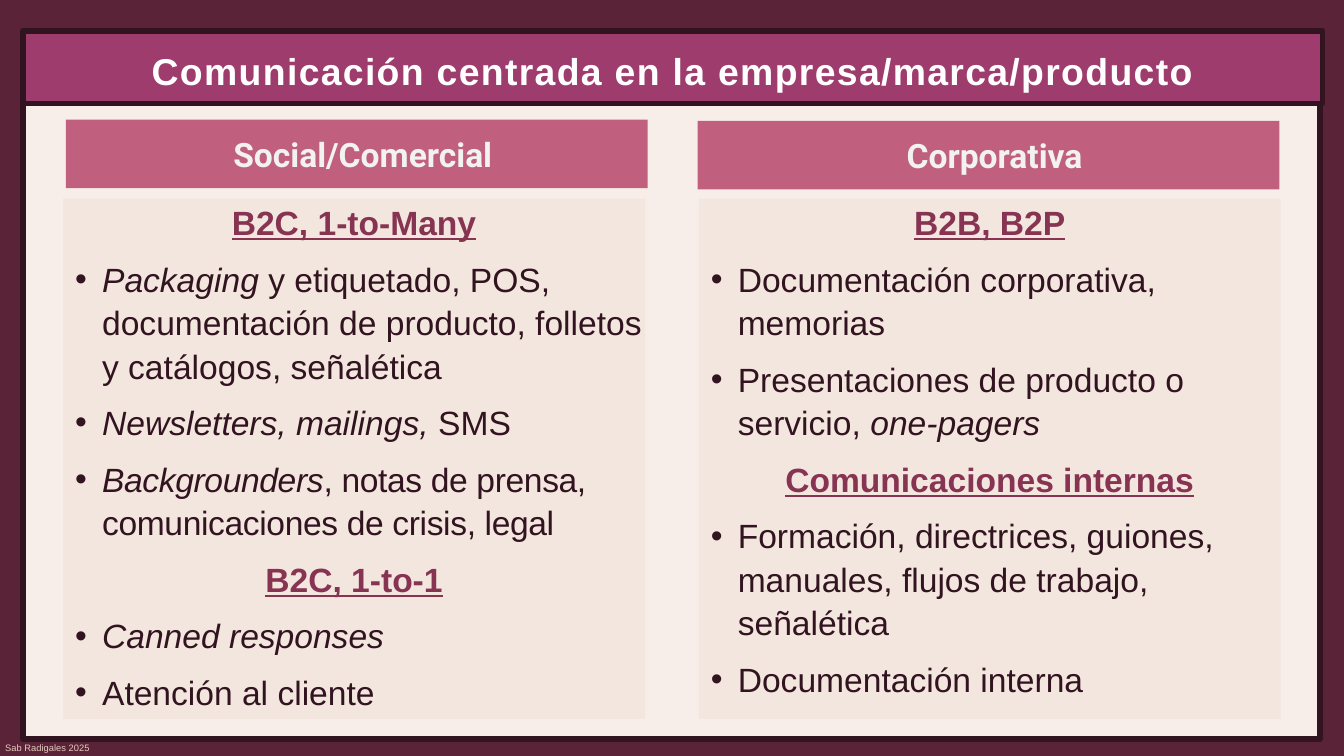
from lxml import etree
from pptx import Presentation
from pptx import util as u
from pptx.dml.color import RGBColor
from pptx.enum import shapes, text
from pptx.oxml.ns import qn

HUES = {
    "wine": "5A2337", "cream": "F7EEE9", "dark": "321320", "plum": "9E3C6D",
    "sand": "EFDCD3", "rose": "C0607E", "head": "873453", "white": "FFFFFF",
    "pale": "F2F2F2", "foot": "E7CBBE",
}
WIDE = 10
HIGH = WIDE * 9 / 16
CELL = 0.1  # inches per grid column and row

# "#" opens a heading, "~" a tightened item; asterisks enclose italics.
SOCIAL = [
    "#B2C, 1-to-Many",
    "*Packaging* y etiquetado, POS, documentación de producto, "
    "folletos y catálogos, señalética",
    "*Newsletters, mailings, *SMS",
    "~*Backgrounders*, notas de prensa, comunicaciones de crisis, legal",
    "#B2C, 1-to-1",
    "*Canned responses*",
    "Atención al cliente",
]
CORP = [
    "#B2B, B2P",
    "Documentación corporativa, memorias",
    "Presentaciones de producto o servicio, *one-pagers*",
    "#Comunicaciones internas",
    "Formación, directrices, guiones, manuales, flujos de trabajo, señalética",
    "Documentación interna",
]


def tint(name):
    return RGBColor.from_string(HUES[name])


def write(para, words, size=18, font="Arial", hue="dark", bold=False,
          line=False, gap=0, mid=True):
    """Add words as runs, with the parts between asterisks in italics."""
    if mid:
        para.alignment = text.PP_ALIGN.CENTER
    for i, part in enumerate(words.split("*")):
        if not part:
            continue
        run = para.add_run()
        run.text = part
        face = run.font
        face.size, face.name = u.Pt(size), font
        face.bold, face.italic, face.underline = bold, i % 2 == 1, line
        face.color.rgb = tint(hue)
        if gap:
            run._r.get_or_add_rPr().set("spc", str(round(gap * 100)))


def indent(para, left, first):
    props = para._p.get_or_add_pPr()
    props.set("marL", str(u.Inches(left)))
    props.set("indent", str(u.Inches(first)))
    return props


def bullet(para):
    props = indent(para, 0.29, -0.2)
    shade = etree.SubElement(props, qn("a:buClr"))
    etree.SubElement(shade, qn("a:srgbClr"), val=HUES["dark"])
    etree.SubElement(props, qn("a:buFont"), typeface="Arial")
    etree.SubElement(props, qn("a:buChar"), char="•")


class Board:
    """Holds the slide and places elements by grid columns and rows."""

    def __init__(self):
        self.deck = Presentation()
        self.deck.slide_width = u.Inches(WIDE)
        self.deck.slide_height = u.Inches(HIGH)
        self.slide = self.deck.slides.add_slide(self.deck.slide_layouts[6])
        fill = self.slide.background.fill
        fill.solid()
        fill.fore_color.rgb = tint("wine")

    def place(self, *cells):
        return [u.Inches(c * CELL) for c in cells]

    def rect(self, *cells, fill=None, line=None, alpha=None):
        box = self.slide.shapes.add_shape(
            shapes.MSO_SHAPE.RECTANGLE, *self.place(*cells))
        box.shadow.inherit = False
        if fill:
            box.fill.solid()
            box.fill.fore_color.rgb = tint(fill)
        else:
            box.fill.background()
        if alpha:
            color = box.fill._xPr.find(".//" + qn("a:srgbClr"))
            etree.SubElement(color, qn("a:alpha"), val=str(alpha * 1000))
        if line:
            box.line.color.rgb = tint(line)
            box.line.width = u.Pt(3)
        else:
            box.line.fill.background()
        return box

    def frame(self, box, anchor, inset=0):
        body = box.text_frame
        body.word_wrap = True
        body.vertical_anchor = anchor
        body.margin_left = body.margin_right = u.Inches(inset)
        body.margin_top = body.margin_bottom = u.Inches(inset / 2)
        return body

    def label(self, *cells, words, inset=0,
              anchor=text.MSO_ANCHOR.MIDDLE, **style):
        box = self.slide.shapes.add_textbox(*self.place(*cells))
        write(self.frame(box, anchor, inset).paragraphs[0], words, **style)

    def banner(self, *cells, words):
        box = self.rect(*cells, fill="rose")
        para = self.frame(box, text.MSO_ANCHOR.MIDDLE).paragraphs[0]
        indent(para, 0.1, -0.01)
        write(para, words, font="Roboto", hue="pale", bold=True)

    def panel(self, *cells, items):
        box = self.rect(*cells, fill="sand", alpha=41)
        body = self.frame(box, text.MSO_ANCHOR.TOP)
        for i, item in enumerate(items):
            para = body.add_paragraph() if i else body.paragraphs[0]
            para.line_spacing, para.space_after = 1.08, u.Pt(7)
            if item.startswith("#"):
                write(para, item[1:], hue="head", bold=True, line=True)
            else:
                bullet(para)
                para.alignment = text.PP_ALIGN.LEFT
                write(para, item.lstrip("~"), mid=False,
                      gap=-0.2 if item.startswith("~") else 0)


def main():
    board = Board()
    board.label(-0.6, 54.7, 17.4, 1.9, words="Sab Radigales 2025", size=5,
                hue="foot", mid=False, inset=0.1, anchor=text.MSO_ANCHOR.TOP)
    board.rect(1.7, 7.8, 96.5, 47.2, fill="cream")
    board.rect(1.7, 7.7, 96.5, 47.3, line="dark")
    board.rect(1.7, 2.3, 96.7, 5.4, fill="plum", line="dark")
    for left, items in ((4.7, SOCIAL), (52, CORP)):
        board.panel(left, 14.8, 43.3, 38.7, items=items)
    board.label(7.9, 2.1, 84.3, 6.3, size=20, hue="white", bold=True, gap=0.7,
                words="Comunicación centrada en la empresa/marca/producto")
    for left, top, words in ((4.9, 8.9, "Social/Comercial"),
                             (51.9, 9, "Corporativa")):
        board.banner(left, top, 43.3, 5.1, words=words)
    board.deck.save("out.pptx")


if __name__ == "__main__":
    main()
